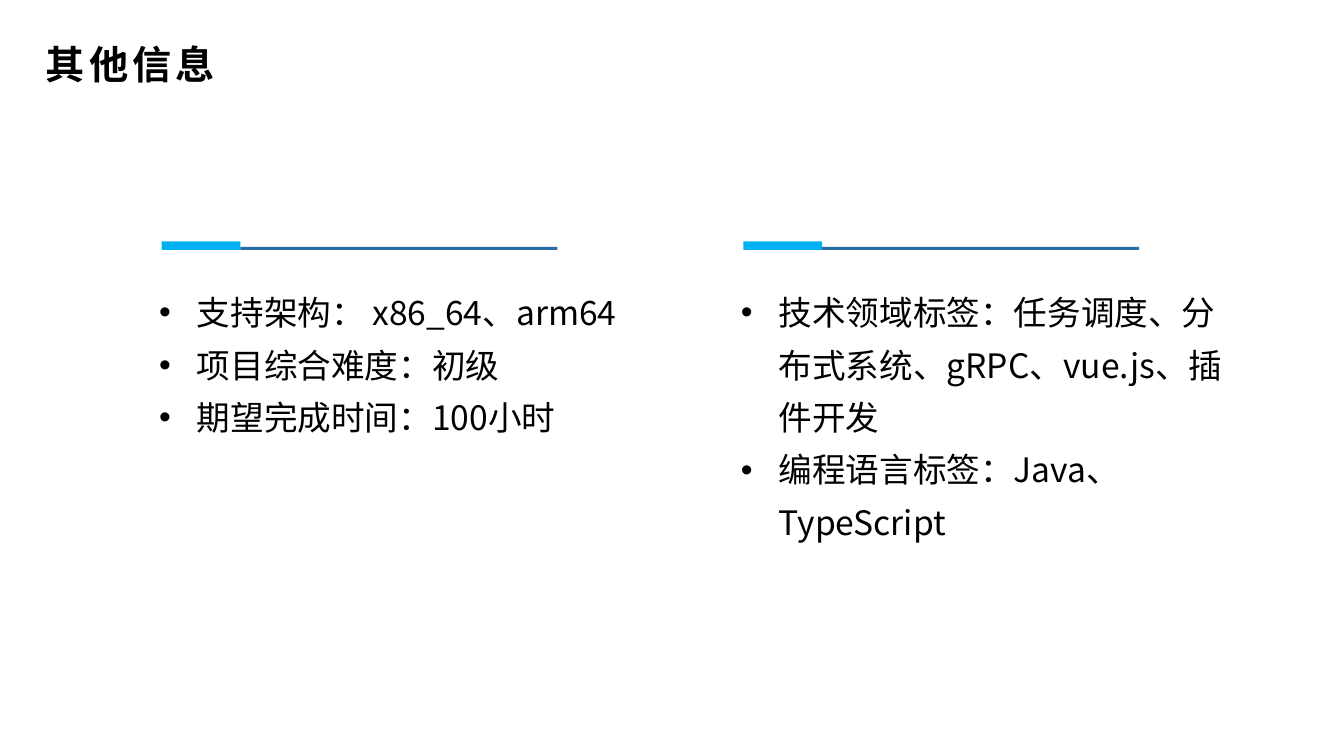
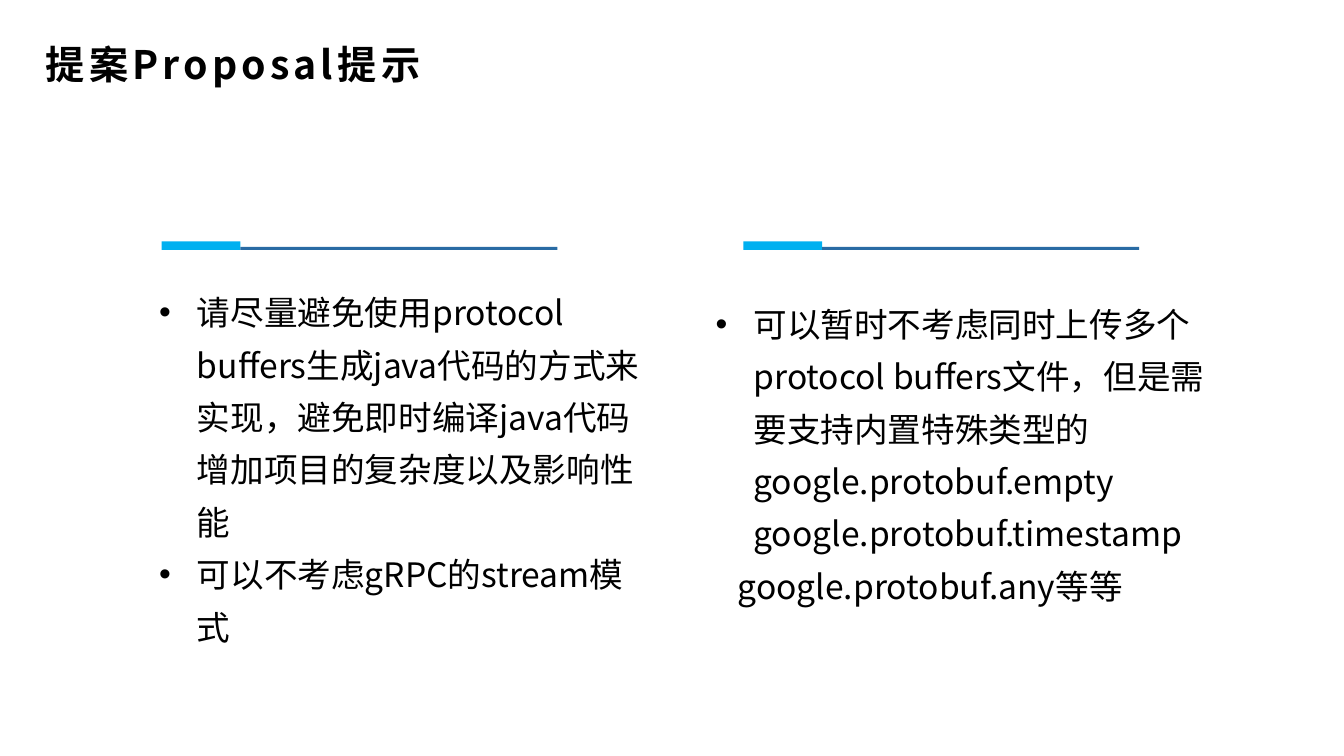
import lxml.etree
import pptx
import pptx.dml.color
import pptx.enum.shapes
import pptx.enum.text
import pptx.oxml.ns
import pptx.util

FONT = "Noto Sans CJK SC"
BLACK = pptx.dml.color.RGBColor(0x00, 0x00, 0x00)
ACCENT = pptx.dml.color.RGBColor(0x00, 0xB0, 0xF0)
RULE = pptx.dml.color.RGBColor(0x29, 0x6B, 0xA4)

TWO_CONTENT = 3  # layout with a title and two bodies
COLUMN_WIDTH = 486
HANGING = 36
RULE_LEFTS = (154, 708)
RULE_TOP = 230

# Each column: left, top, height, then (text, bulleted, left margin)
SLIDES = [
    ("其他信息", [
        (142, 262, 211, [
            ("支持架构： x86_64、arm64", True, HANGING),
            ("项目综合难度：初级", True, HANGING),
            ("期望完成时间：100小时", True, HANGING),
        ]),
        (696, 262, 261, [
            ("技术领域标签：任务调度、分布式系统、gRPC、vue.js、插件开发", True, HANGING),
            ("编程语言标签：Java、TypeScript", True, HANGING),
        ]),
    ]),
    ("提案Proposal提示", [
        (142, 262, 362, [
            ("请尽量避免使用protocol buffers生成java代码的方式来实现，"
             "避免即时编译java代码增加项目的复杂度以及影响性能", True, HANGING),
            ("可以不考虑gRPC的stream模式", True, HANGING),
        ]),
        (672, 273, 312, [
            ("可以暂时不考虑同时上传多个protocol buffers文件，但是需要支持内置特殊类型的"
             "google.protobuf.empty google.protobuf.timestamp", True, HANGING),
            ("google.protobuf.any等等", False, 21),
        ]),
    ]),
]


def px(length):
    return pptx.util.Emu(length * 9525)


def place(shape, left, top, width, height):
    shape.left, shape.top = px(left), px(top)
    shape.width, shape.height = px(width), px(height)


def style_font(paragraph, size, bold=False, spacing=0):
    font = paragraph.font
    font.name, font.size, font.bold = FONT, pptx.util.Pt(size), bold
    font.color.rgb = BLACK
    properties = paragraph._p.pPr.find(pptx.oxml.ns.qn("a:defRPr"))
    properties.set("spc", str(spacing * 100))
    east_asian = lxml.etree.Element(pptx.oxml.ns.qn("a:ea"), typeface=FONT)
    properties.find(pptx.oxml.ns.qn("a:latin")).addnext(east_asian)


def prepare_frame(placeholder, anchor):
    frame = placeholder.text_frame
    frame.word_wrap = True
    frame.auto_size = pptx.enum.text.MSO_AUTO_SIZE.NONE
    frame.vertical_anchor = anchor
    return frame


def fill_title(title, text):
    place(title, 34, 33, 767, 55)
    frame = prepare_frame(title, pptx.enum.text.MSO_ANCHOR.MIDDLE)
    frame.text = text
    heading = frame.paragraphs[0]
    heading.alignment = pptx.enum.text.PP_ALIGN.LEFT
    style_font(heading, 28, bold=True, spacing=3)


def fill_column(body, left, top, height, items):
    place(body, left, top, COLUMN_WIDTH, height)
    frame = prepare_frame(body, pptx.enum.text.MSO_ANCHOR.TOP)
    frame.text = "\n".join(text for text, _, _ in items)
    for paragraph, (_, bulleted, margin) in zip(frame.paragraphs, items):
        properties = paragraph._p.get_or_add_pPr()
        properties.set("marL", str(px(margin)))
        properties.set("indent", str(px(-margin if bulleted else 0)))
        if not bulleted:
            lxml.etree.SubElement(properties, pptx.oxml.ns.qn("a:buNone"))
        paragraph.line_spacing = 1.3
        paragraph.space_before = pptx.util.Pt(0)
        style_font(paragraph, 24)


def add_rule(slide, left, top):
    """Short thick accent followed by a thin line on the same base."""
    for offset, drop, width, height, color in (
            (0, 0, 75, 8, ACCENT), (75, 5, 302, 3, RULE)):
        bar = slide.shapes.add_shape(
            pptx.enum.shapes.MSO_SHAPE.RECTANGLE,
            px(left + offset), px(top + drop), px(width), px(height))
        bar.shadow.inherit = False
        bar.fill.solid()
        bar.fill.fore_color.rgb = color
        bar.line.fill.background()


def add_two_column_slide(deck, title, columns):
    slide = deck.slides.add_slide(deck.slide_layouts[TWO_CONTENT])
    fill_title(slide.shapes.title, title)
    bodies = list(slide.placeholders)[1:]
    for body, column, rule_left in zip(bodies, columns, RULE_LEFTS):
        add_rule(slide, rule_left, RULE_TOP)
        fill_column(body, *column)


def main():
    deck = pptx.Presentation()
    deck.slide_width, deck.slide_height = px(1280), px(720)
    for title, columns in SLIDES:
        add_two_column_slide(deck, title, columns)
    deck.save("out.pptx")


if __name__ == "__main__":
    main()
